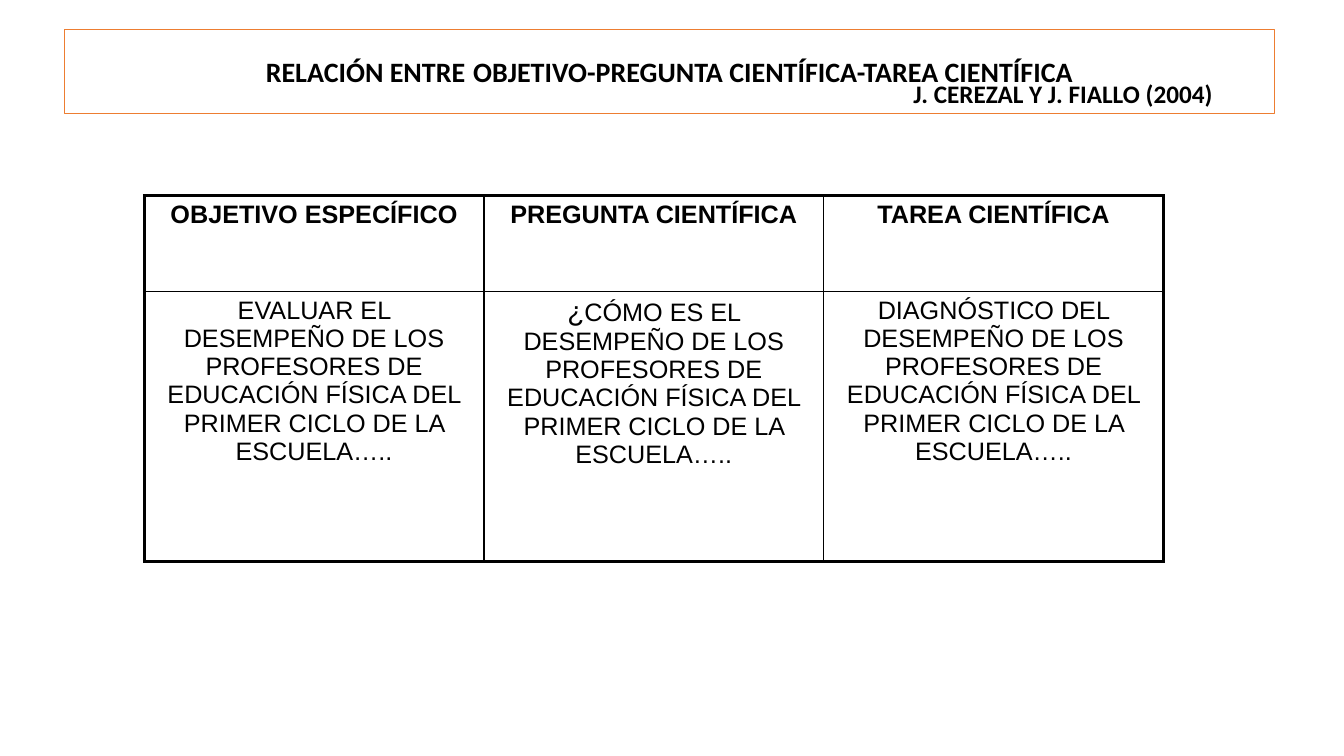
from dataclasses import dataclass

from lxml import etree
from pptx import Presentation
from pptx.dml.color import RGBColor
from pptx.enum.text import MSO_ANCHOR, MSO_AUTO_SIZE, PP_ALIGN
from pptx.oxml.ns import qn
from pptx.util import Inches, Pt

CENTER, LEFT = PP_ALIGN.CENTER, PP_ALIGN.LEFT
MIDDLE, TOP = MSO_ANCHOR.MIDDLE, MSO_ANCHOR.TOP
NO_FIT = MSO_AUTO_SIZE.NONE
FIT_SHAPE = MSO_AUTO_SIZE.SHAPE_TO_FIT_TEXT


@dataclass(frozen=True)
class Theme:
    ink: str = "000000"
    paper: str = "FFFFFF"
    accent: str = "ED7D31"
    heading_font: str = "Calibri"
    table_font: str = "Arial"
    body: int = 18
    large: int = 20
    gap: int = 24
    title_line: float = 0.75
    outer_line: float = 2.25
    inner_line: float = 1


THEME = Theme()

# Runs are (text, size) pairs.
TITLE = [
    ("RELACIÓN ENTRE", THEME.large),
    (" ", THEME.gap),
    ("OBJETIVO-PREGUNTA CIENTÍFICA-TAREA CIENTÍFICA", THEME.large),
]
AUTHORS = [("J. CEREZAL Y J. FIALLO (2004)", THEME.body)]
SUBJECT = "DESEMPEÑO DE LOS PROFESORES DE EDUCACIÓN FÍSICA DEL PRIMER CICLO DE LA ESCUELA….."
ROWS = [
    [
        [("OBJETIVO ESPECÍFICO", THEME.body)],
        [("PREGUNTA CIENTÍFICA", THEME.body)],
        [("TAREA CIENTÍFICA", THEME.body)],
    ],
    [
        [(f"EVALUAR EL {SUBJECT}", THEME.body)],
        [("¿", THEME.large), (f"CÓMO ES EL {SUBJECT}", THEME.body)],
        [(f"DIAGNÓSTICO DEL {SUBJECT}", THEME.body)],
    ],
]

SLIDE_SIZE = (13.33, 7.5)
TITLE_BOX = (0.64, 0.29, 12, 0.84)
AUTHORS_BOX = (8.96, 0.73, 3.2, 0.4)
TABLE_ORIGIN = (1.43, 1.94)
COLUMN_WIDTH = 3.37
ROW_HEIGHTS = (0.95, 2.68)


def write(para, runs, font, bold, align):
    para.alignment = align
    for text, size in runs:
        span = para.add_run()
        span.text = text
        span.font.name = font
        span.font.size = Pt(size)
        span.font.bold = bold
        span.font.color.rgb = RGBColor.from_string(THEME.ink)


def set_borders(cell, widths):
    """Draw the left, right, top and bottom edges, widths in points."""
    properties = cell._tc.get_or_add_tcPr()
    for index, (side, width) in enumerate(zip("LRTB", widths)):
        edge = etree.Element(qn(f"a:ln{side}"), w=str(Pt(width)))
        fill = etree.SubElement(edge, qn("a:solidFill"))
        etree.SubElement(fill, qn("a:srgbClr"), val=THEME.ink)
        properties.insert(index, edge)


def add_title(page):
    box = page.shapes.title
    box.left, box.top, box.width, box.height = map(Inches, TITLE_BOX)
    box.line.color.rgb = RGBColor.from_string(THEME.accent)
    box.line.width = Pt(THEME.title_line)
    frame = box.text_frame
    frame.auto_size = NO_FIT
    frame.vertical_anchor = MIDDLE
    para = frame.paragraphs[0]
    para.line_spacing = 0.9
    write(para, TITLE, THEME.heading_font, True, CENTER)


def add_relation_table(page):
    row_count, column_count = len(ROWS), len(ROWS[0])
    size = (COLUMN_WIDTH * column_count, sum(ROW_HEIGHTS))
    table = page.shapes.add_table(
        row_count, column_count, *map(Inches, TABLE_ORIGIN + size)).table
    table.first_row = table.horz_banding = False
    for column in table.columns:
        column.width = Inches(COLUMN_WIDTH)
    for r, (row, height) in enumerate(zip(ROWS, ROW_HEIGHTS)):
        table.rows[r].height = Inches(height)
        for c, runs in enumerate(row):
            cell = table.cell(r, c)
            cell.vertical_anchor = TOP
            cell.fill.solid()
            cell.fill.fore_color.rgb = RGBColor.from_string(THEME.paper)
            on_outside = (c == 0, c == column_count - 1, r == 0, r == row_count - 1)
            set_borders(cell, [THEME.outer_line if outside else THEME.inner_line
                               for outside in on_outside])
            write(cell.text_frame.paragraphs[0], runs, THEME.table_font, r == 0, CENTER)


def add_authors(page):
    frame = page.shapes.add_textbox(*map(Inches, AUTHORS_BOX)).text_frame
    frame.word_wrap = False
    frame.auto_size = FIT_SHAPE
    write(frame.paragraphs[0], AUTHORS, THEME.heading_font, True, LEFT)


def main():
    deck = Presentation()
    deck.slide_width, deck.slide_height = map(Inches, SLIDE_SIZE)
    page = deck.slides.add_slide(deck.slide_layouts.get_by_name("Title Only"))
    add_title(page)
    add_relation_table(page)
    add_authors(page)
    deck.save("out.pptx")


if __name__ == "__main__":
    main()
